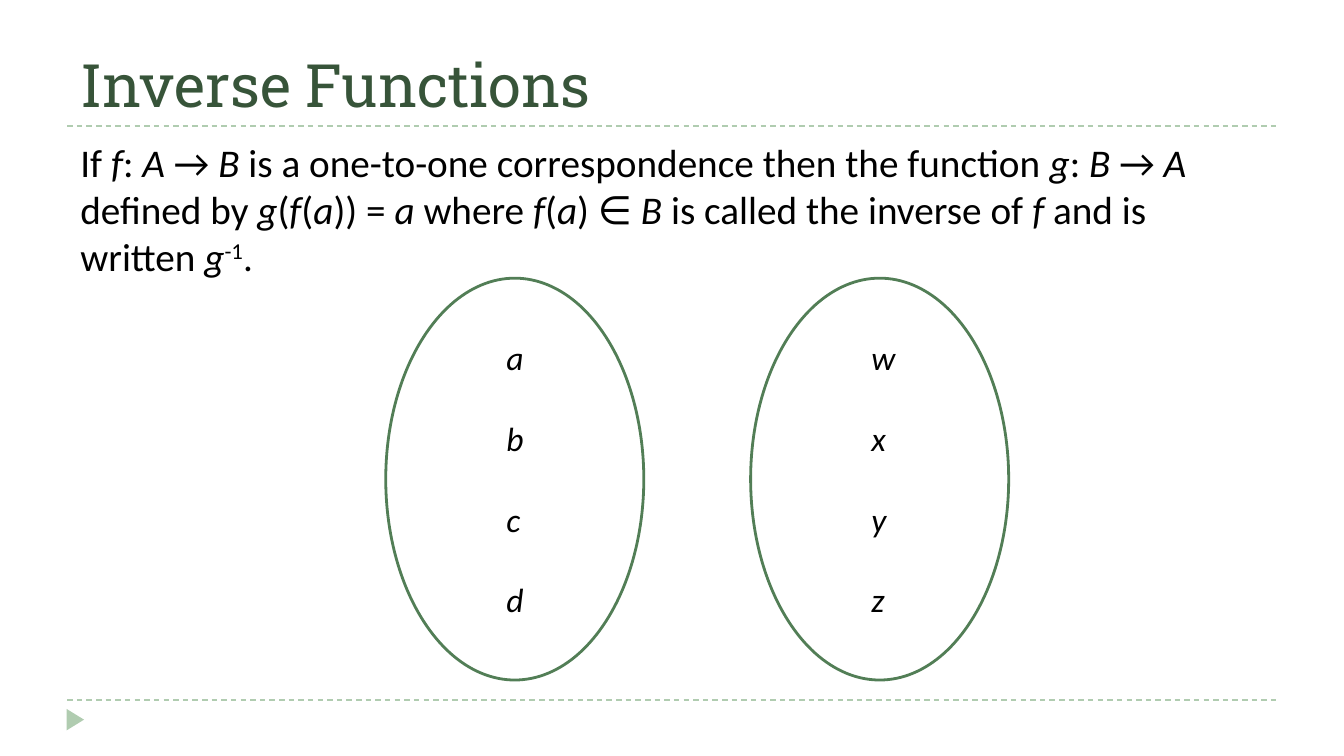
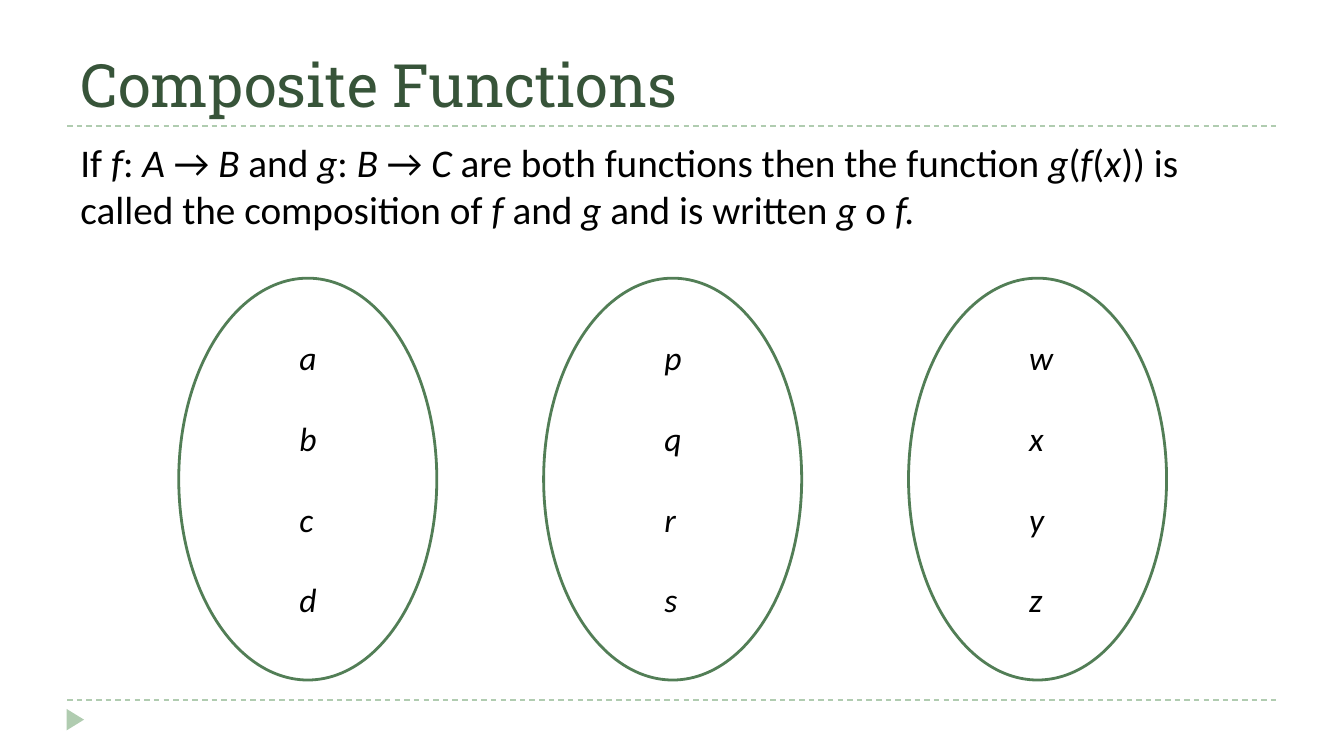
from lxml import etree
from pptx import Presentation, util as u
from pptx.dml.color import RGBColor
from pptx.enum import dml, shapes, text
from pptx.oxml.ns import qn

DARK = RGBColor(0x37, 0x54, 0x39)
GREEN = RGBColor(0x52, 0x7E, 0x56)
PALE = RGBColor(0xB0, 0xCC, 0xB0)
WHITE = RGBColor(0xFF, 0xFF, 0xFF)
BLACK = RGBColor(0, 0, 0)
HEAD, BODY = "Roboto Slab", "Calibri"

# The slide is a 16:9 grid of 100 columns by 56.25 rows, each cell 0.1 inch square.
COLS, ROWS = 100, 56.25
LEFT, WIDE = 5, 90
RULES = 9.37, 52.1
OVAL_TOP, OVAL_W, OVAL_H = 20.7, 19.2, 29.9
STEP = 27.15


def cells(*nums):
    return [u.Inches(n / 10) for n in nums]


def style(font, name, size, color):
    font.name, font.size = name, u.Pt(size)
    font.color.rgb = color


def add_rule(slide, row):
    rule = slide.shapes.add_connector(
        shapes.MSO_CONNECTOR.STRAIGHT, *cells(LEFT, row, LEFT + WIDE, row))
    rule.line.color.rgb = PALE
    rule.line.width = u.Pt(0.75)
    rule.line.dash_style = dml.MSO_LINE.DASH
    etree.SubElement(rule._element.spPr, qn("a:effectLst"))


def add_frame(slide):
    """Draw the dashed rules and the footer marker."""
    for row in RULES:
        add_rule(slide, row)
    mark = slide.shapes.add_shape(
        shapes.MSO_SHAPE.ISOSCELES_TRIANGLE, *cells(4.8, 52.9, 1.6, 1.3))
    mark.rotation = 90
    mark.shadow.inherit = False
    mark.fill.solid()
    mark.fill.fore_color.rgb = PALE
    mark.line.fill.background()


def set_title(slide, words):
    title = slide.shapes.title
    title.left, title.top, title.width, title.height = cells(LEFT, 1.25, WIDE, 8.12)
    frame = title.text_frame
    frame.text = words
    frame.auto_size = text.MSO_AUTO_SIZE.NONE
    frame.vertical_anchor = text.MSO_ANCHOR.BOTTOM
    para = frame.paragraphs[0]
    para.alignment = text.PP_ALIGN.LEFT
    style(para.runs[0].font, HEAD, 32, DARK)


def add_text(slide, words, rows):
    """Write a paragraph where *x* is italic and ^x^ is superscript."""
    frame = slide.shapes.add_textbox(*cells(LEFT, 9.8, WIDE, rows)).text_frame
    frame.word_wrap = True
    frame.auto_size = text.MSO_AUTO_SIZE.SHAPE_TO_FIT_TEXT
    para = frame.paragraphs[0]
    para.space_after = u.Pt(12)
    for i, part in enumerate(words.split("*")):
        for j, bit in enumerate(part.split("^")):
            if not bit:
                continue
            run = para.add_run()
            run.text = bit
            style(run.font, BODY, 21, BLACK)
            run.font.italic = i % 2 == 1
            if j % 2:
                run._r.get_or_add_rPr().set("baseline", "30000")


def add_set(slide, left, names):
    """Draw one oval with its members listed down the middle."""
    oval = slide.shapes.add_shape(
        shapes.MSO_SHAPE.OVAL, *cells(left, OVAL_TOP, OVAL_W, OVAL_H))
    oval.shadow.inherit = False
    oval.fill.solid()
    oval.fill.fore_color.rgb = WHITE
    oval.line.color.rgb = GREEN
    oval.line.width = u.Pt(1.5)

    frame = slide.shapes.add_textbox(
        *cells(left + 8, OVAL_TOP + 3.9, 3.4, 22.2)).text_frame
    frame.word_wrap = True
    frame.margin_right = 0
    frame.text = "\n".join(names)
    for k, para in enumerate(frame.paragraphs):
        para.space_before = u.Pt(21.6 if k else 0)
        font = para.runs[0].font
        style(font, BODY, 18, BLACK)
        font.italic = True


def add_page(deck, title, words, rows, left, sets):
    slide = deck.slides.add_slide(deck.slide_layouts[5])
    add_frame(slide)
    set_title(slide, title)
    add_text(slide, words, rows)
    for k, names in enumerate(sets):
        add_set(slide, left + k * STEP, names)


def main():
    deck = Presentation()
    deck.slide_width, deck.slide_height = cells(COLS, ROWS)
    add_page(
        deck, "Inverse Functions",
        "If *f*: *A *→ *B* is a one-to-one correspondence then the function "
        "*g*: *B* → *A* defined by *g*(*f*(*a*)) = *a* where *f*(*a*) ∈ *B *"
        "is called the inverse of *f* and is written *g*^-1^.",
        11.6, 28.7, ["abcd", "wxyz"])
    add_page(
        deck, "Composite Functions",
        "If *f*: *A *→ *B* and *g*: *B* → *C *are both functions then the "
        "function *g*(*f*(*x*)) is called the composition of *f* and *g* "
        "and is written *g* o *f.*",
        8.1, 13.3, ["abcd", "pqrs", "wxyz"])
    deck.save("out.pptx")


if __name__ == "__main__":
    main()
